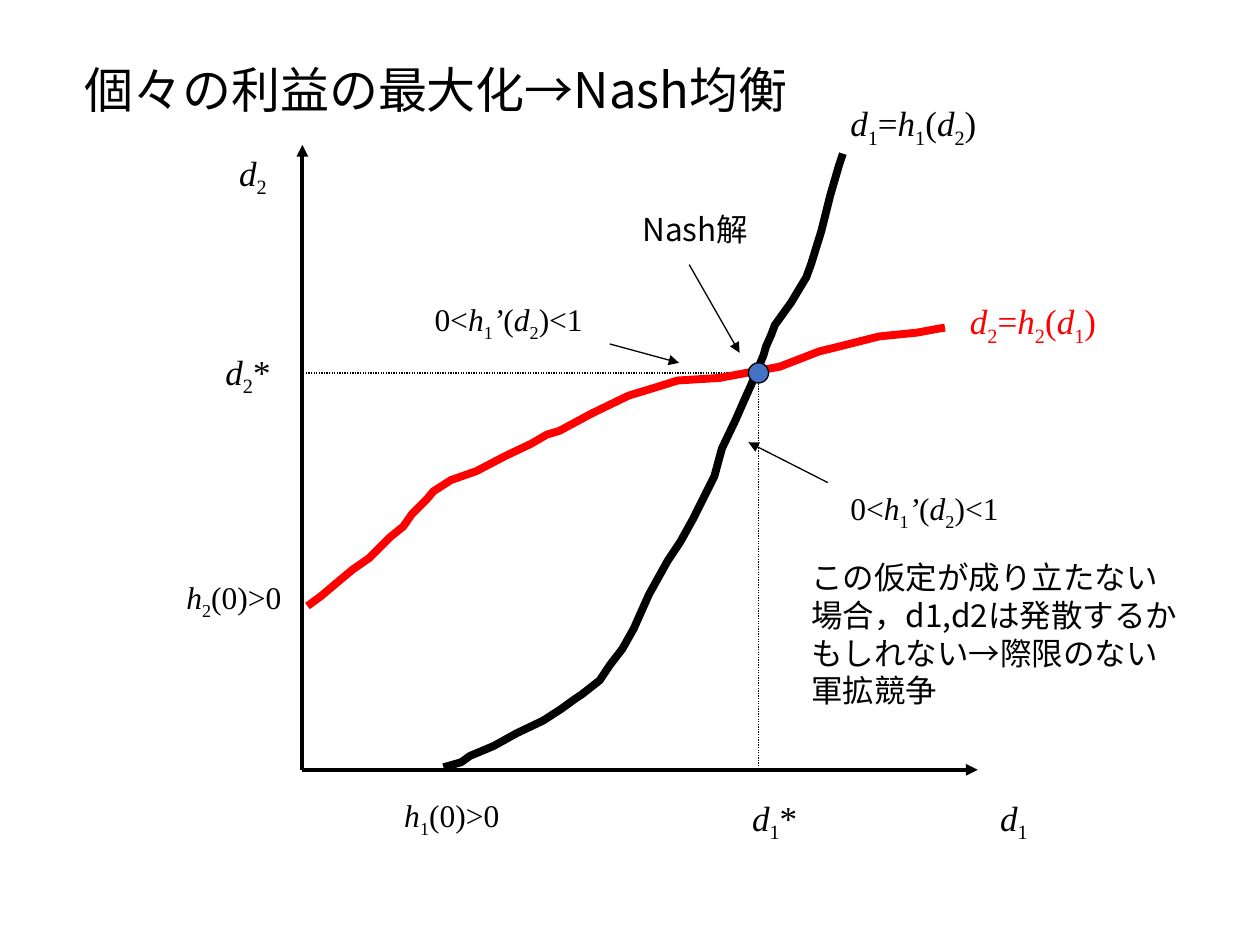
import itertools

import pptx
import pptx.util
from lxml import etree
from pptx.dml.color import RGBColor
from pptx.enum.dml import MSO_LINE
from pptx.enum.shapes import MSO_CONNECTOR, MSO_SHAPE
from pptx.enum.text import MSO_ANCHOR, MSO_AUTO_SIZE, PP_ALIGN
from pptx.oxml.ns import qn

Inches, Pt = pptx.util.Inches, pptx.util.Pt

BLACK = RGBColor(0x00, 0x00, 0x00)
RED = RGBColor(0xFF, 0x00, 0x00)
BLUE = RGBColor(0x44, 0x72, 0xC4)
SERIF, SANS = "Times New Roman", "Noto Sans CJK JP"

# Content; in formulas "_" lowers the next character and the names are italic
TITLE = "個々の利益の最大化→Nash均衡"
NOTE = "この仮定が成り立たない場合，d1,d2は発散するかもしれない→際限のない軍拡競争"
ITALIC = "dh’"
SLOPE = "0<h_1’(d_2)<1"
FORMULAS = [  # text, left, top, width, size, colour
    ("d_1*", 5.87, 6.27, 0.79, 20, BLACK),
    ("d_2", 1.8, 1.15, 0.47, 20, BLACK),
    ("d_1=h_1(d_2)", 6.65, 0.76, 1.57, 20, BLACK),
    ("d_2=h_2(d_1)", 7.6, 2.33, 1.57, 20, RED),
    ("d_1", 7.84, 6.27, 0.47, 20, BLACK),
    ("d_2*", 1.69, 2.73, 0.71, 20, BLACK),
    (SLOPE, 6.65, 3.83, 1.42, 18, BLACK),
    (SLOPE, 3.35, 2.33, 1.42, 18, BLACK),
    ("h_1(0)>0", 3.11, 6.27, 1.42, 18, BLACK),
    ("h_2(0)>0", 1.38, 4.54, 1.42, 18, BLACK),
]

# Geometry of the graph, in inches
ORIGIN, NASH, DOT = (2.4, 6.11), (6.02, 2.96), 0.16
AXIS_ENDS = [(7.76, ORIGIN[1]), (ORIGIN[0], 1.15)]
GUIDE_ENDS = [(ORIGIN[0], NASH[1]), (NASH[0], ORIGIN[1])]
POINTERS = [((5.47, 2.1), (5.87, 2.8)), ((6.57, 3.83), (5.94, 3.51)),
            ((4.84, 2.73), (5.39, 2.88))]
H1_CURVE = [
    (3.52, 6.09), (3.66, 6.05), (3.73, 6), (3.92, 5.92), (4.1, 5.82), (4.31, 5.72),
    (4.45, 5.63), (4.56, 5.55), (4.62, 5.51), (4.76, 5.4), (4.84, 5.28), (4.94, 5.15),
    (5.03, 4.99), (5.15, 4.72), (5.3, 4.45), (5.4, 4.3), (5.5, 4.12), (5.57, 3.98),
    (5.67, 3.78), (5.73, 3.56), (5.84, 3.33), (5.91, 3.17), (5.96, 3.06), (6.06, 2.82),
    (6.08, 2.75), (6.12, 2.66), (6.15, 2.58), (6.28, 2.4), (6.34, 2.3), (6.4, 2.2),
    (6.44, 2.09), (6.52, 1.83), (6.59, 1.55), (6.66, 1.31), (6.69, 1.22),
]
H2_CURVE = [
    (2.44, 4.81), (2.55, 4.73), (2.68, 4.62), (2.8, 4.52), (2.93, 4.43), (3.1, 4.26),
    (3.2, 4.18), (3.27, 4.08), (3.39, 3.96), (3.44, 3.9), (3.58, 3.81), (3.78, 3.74),
    (4.01, 3.62), (4.22, 3.52), (4.34, 3.45), (4.44, 3.42), (4.7, 3.28), (4.99, 3.14),
    (5.22, 3.07), (5.38, 3.02), (5.71, 3), (6.19, 2.91), (6.5, 2.79), (6.74, 2.73),
    (6.98, 2.67), (7.28, 2.64), (7.44, 2.61), (7.5, 2.6),
]


def add_run(p, text, size, color, font, italic=False, lowered=False):
    r = p.add_run()
    r.text = text
    r.font.size, r.font.name, r.font.italic = Pt(size), font, italic
    r.font.color.rgb = color
    rpr = r.font._element
    etree.SubElement(rpr, qn("a:ea")).set("typeface", font)
    if lowered:
        rpr.set("baseline", "-25000")


def write(sp, text, size=18, color=BLACK, font=SANS, formula=False):
    tf = sp.text_frame
    tf.word_wrap, tf.auto_size = True, MSO_AUTO_SIZE.NONE
    tf.vertical_anchor = MSO_ANCHOR.TOP
    p = tf.paragraphs[0]
    p.alignment = PP_ALIGN.LEFT
    if not formula:
        p.line_spacing = Pt(size * 1.2)
        add_run(p, text, size, color, font)
        return
    chars = [(c, c in ITALIC, before == "_")
             for before, c in zip(" " + text, text) if c != "_"]
    for (italic, lowered), group in itertools.groupby(chars, key=lambda c: c[1:]):
        add_run(p, "".join(c[0] for c in group), size, color, font, italic, lowered)


def add_line(s, start, end, width=0.75, dash=None, arrow=False):
    cx = s.shapes.add_connector(MSO_CONNECTOR.STRAIGHT,
                                *(Inches(v) for v in start + end))
    cx.line.color.rgb, cx.line.width = BLACK, Pt(width)
    if dash:
        cx.line.dash_style = dash
    if arrow:
        etree.SubElement(cx.line._get_or_add_ln(), qn("a:tailEnd")).set("type", "triangle")
    etree.SubElement(cx._element.spPr, qn("a:effectLst"))


def add_curve(s, points, color):
    # The builder rounds to whole units, so points are given in EMU
    points = [(Inches(x), Inches(y)) for x, y in points]
    builder = s.shapes.build_freeform(*points[0])
    builder.add_line_segments(points[1:], close=False)
    sp = builder.convert_to_shape()
    sp.fill.background()
    sp.line.color.rgb, sp.line.width = color, Pt(4.5)
    sp.shadow.inherit = False


def add_box(s, left, top, width, height):
    return s.shapes.add_textbox(*(Inches(v) for v in (left, top, width, height)))


def main():
    prs = pptx.Presentation()
    prs.slide_width, prs.slide_height = Inches(10), Inches(7.5)
    s = prs.slides.add_slide(prs.slide_layouts[5])

    # Title
    title = s.shapes.title
    title.left, title.top = Inches(0.57), Inches(0.42)
    title.width, title.height = Inches(5.91), Inches(0.57)
    write(title, TITLE, size=28)

    # Guides and axes
    for end in GUIDE_ENDS:
        add_line(s, NASH, end, dash=MSO_LINE.ROUND_DOT)
    for end in AXIS_ENDS:
        add_line(s, ORIGIN, end, width=2.25, arrow=True)

    # Reaction curves and their crossing
    add_curve(s, H1_CURVE, BLACK)
    add_curve(s, H2_CURVE, RED)
    dot = s.shapes.add_shape(MSO_SHAPE.OVAL, Inches(NASH[0] - DOT / 2),
                             Inches(NASH[1] - DOT / 2), Inches(DOT), Inches(DOT))
    dot.fill.solid()
    dot.fill.fore_color.rgb = BLUE
    dot.line.color.rgb, dot.line.width = BLACK, Pt(0.75)
    dot.shadow.inherit = False

    # Pointers
    for start, end in POINTERS:
        add_line(s, start, end, arrow=True)

    # Labels and note
    for text, left, top, width, size, color in FORMULAS:
        box = add_box(s, left, top, width, 0.43 if size == 20 else 0.4)
        write(box, text, size=size, color=color, font=SERIF, formula=True)
    write(add_box(s, 5, 1.62, 1.18, 0.4), "Nash解")
    write(add_box(s, 6.34, 4.38, 3.17, 1.31), NOTE)

    prs.save("out.pptx")


if __name__ == "__main__":
    main()
